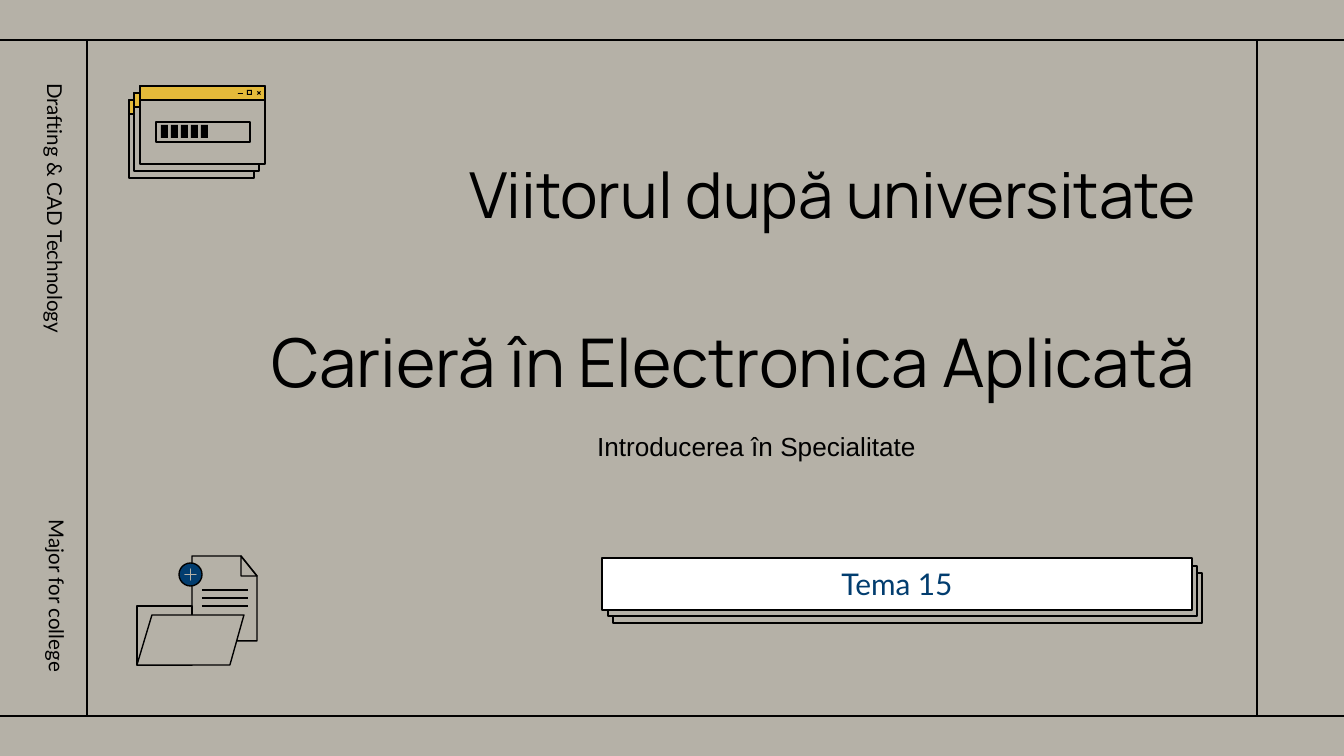
from lxml.etree import SubElement
from pptx import Presentation
from pptx.dml.color import RGBColor
from pptx.enum.shapes import MSO_CONNECTOR, MSO_SHAPE
from pptx.enum.text import MSO_ANCHOR as ANCHOR, PP_ALIGN as ALIGN
from pptx.oxml.ns import qn
from pptx.util import Emu, Pt

EMU_PER_PX = 914400 / 134.4
WIDTH, HEIGHT = 1344, 756
STONE = RGBColor(0xB5, 0xB1, 0xA7)
BLACK = RGBColor(0, 0, 0)
WHITE = RGBColor(0xFF, 0xFF, 0xFF)
NAVY = RGBColor(0x02, 0x3D, 0x6F)
GOLD = RGBColor(0xE4, 0xBA, 0x3A)
WIDE_INSET = 13


def px(value):
    return Emu(round(value * EMU_PER_PX))


def write(shape, text, *, font, size, color=BLACK, align=ALIGN.LEFT,
          anchor=ANCHOR.MIDDLE, inset=WIDE_INSET, line_spacing=None, space_after=0):
    frame = shape.text_frame
    frame.word_wrap = True
    frame.vertical_anchor = anchor
    frame.margin_left = frame.margin_right = px(WIDE_INSET)
    frame.margin_top = frame.margin_bottom = px(inset)
    paragraph = frame.paragraphs[0]
    paragraph.alignment = align
    paragraph.line_spacing = line_spacing
    paragraph.space_after = Pt(space_after)
    run = paragraph.add_run()
    run.text = text
    run.font.name = font
    run.font.size = Pt(size)
    run.font.color.rgb = color


class Canvas:
    """The current slide and the outline style shared by its elements."""

    def __init__(self, slide, line_color=BLACK, line_width=0.75):
        self.slide = slide
        self.shapes = slide.shapes
        self.line_color = line_color
        self.line_width = Pt(line_width)

    def style(self, shape, fill, line):
        shape.shadow.inherit = False
        if fill is None:
            shape.fill.background()
        else:
            shape.fill.solid()
            shape.fill.fore_color.rgb = fill
        if line is None:
            shape.line.fill.background()
        else:
            shape.line.color.rgb = line
            shape.line.width = self.line_width
        return shape

    def preset(self, kind, left, top, width, height, fill=None, line=BLACK, adjust=None):
        shape = self.shapes.add_shape(kind, px(left), px(top), px(width), px(height))
        if adjust is not None:
            shape.adjustments[0] = adjust
        return self.style(shape, fill, line)

    def rectangle(self, left, top, width, height, fill=None, line=BLACK):
        return self.preset(MSO_SHAPE.RECTANGLE, left, top, width, height, fill, line)

    def polygon(self, points, fill=None, line=BLACK):
        builder = self.shapes.build_freeform(*points[0], scale=EMU_PER_PX)
        builder.add_line_segments(points[1:], close=True)
        return self.style(builder.convert_to_shape(), fill, line)

    def line(self, x1, y1, x2, y2):
        connector = self.shapes.add_connector(
            MSO_CONNECTOR.STRAIGHT, px(x1), px(y1), px(x2), px(y2))
        connector.line.color.rgb = self.line_color
        connector.line.width = self.line_width
        SubElement(connector._element.spPr, qn("a:effectLst"))

    def text(self, left, top, width, height, text, rotation=0, **text_format):
        box = self.shapes.add_textbox(px(left), px(top), px(width), px(height))
        box.rotation = rotation
        write(box, text, **text_format)


def draw_page_frame(canvas):
    top, bottom = 40, 716
    for y in (top, bottom):
        canvas.line(0, y, WIDTH, y)
    for x in (87, 1257):
        canvas.line(x, bottom, x, top)


def draw_badge(canvas):
    for left, top in ((613, 573), (608, 566)):
        canvas.rectangle(left, top, 589, 50, STONE)
    badge = canvas.rectangle(602, 558, 590, 52, WHITE)
    write(badge, "Tema 15", font="Lato", size=16, color=NAVY, align=ALIGN.CENTER)


def draw_folder(canvas):
    canvas.rectangle(137, 606, 55, 59, STONE)
    canvas.polygon([(192, 556), (192, 641), (257, 641), (257, 576), (241, 556)])
    canvas.polygon([(241, 556), (241, 576), (257, 576)])
    canvas.polygon([(152, 615), (137, 665), (230, 665), (244, 615)], STONE)
    for row in range(3):
        y = 590 + 8 * row
        canvas.line(202, y, 248, y)
    canvas.preset(MSO_SHAPE.OVAL, 179, 563, 23, 23, NAVY)
    canvas.preset(MSO_SHAPE.MATH_PLUS, 183, 567, 15, 15, STONE, STONE, adjust=0)


def draw_window_controls(canvas, left, top):
    close_mark = [(0, 0), (2, 1), (4, 0), (3, 2), (4, 4), (2, 3), (0, 4), (1, 2)]
    canvas.polygon([(left + 19 + x, top + 1 + y) for x, y in close_mark], BLACK, None)
    canvas.preset(MSO_SHAPE.FRAME, left + 9, top, 5, 5, BLACK, None, adjust=0.2)
    canvas.rectangle(left, top + 3, 5, 1, BLACK, None)


def draw_loading_windows(canvas):
    for left, top in ((129, 100), (134, 93), (140, 86)):
        canvas.rectangle(left, top, 125, 78, STONE)
        canvas.rectangle(left, top, 125, 14, GOLD)
    draw_window_controls(canvas, 238, 90)
    canvas.rectangle(156, 122, 94, 20)
    for block in range(5):
        canvas.rectangle(161 + 10 * block, 125, 7, 13, BLACK, None)


def main():
    presentation = Presentation()
    presentation.slide_width, presentation.slide_height = px(WIDTH), px(HEIGHT)
    slide = presentation.slides.add_slide(presentation.slide_layouts[6])
    slide.background.fill.solid()
    slide.background.fill.fore_color.rgb = STONE
    canvas = Canvas(slide)

    draw_page_frame(canvas)
    draw_badge(canvas)
    canvas.text(342, 118, 867, 151, "Viitorul după universitate",
                font="Manrope", size=34, align=ALIGN.RIGHT)
    canvas.text(160, 298, 1048, 125, "Carieră în Electronica Aplicată",
                font="Manrope", size=36, align=ALIGN.RIGHT)
    canvas.text(321, 423, 871, 83, "Introducerea în Specialitate",
                font="Arial", size=14, align=ALIGN.CENTER, anchor=ANCHOR.TOP, inset=7)
    draw_folder(canvas)
    draw_loading_windows(canvas)
    canvas.text(-99, 211, 312, 30, "Drafting & CAD Technology", rotation=90,
                font="Lato", size=11, line_spacing=1.15, space_after=12)
    canvas.text(-82, 531, 278, 30, "Major for college", rotation=90,
                font="Lato", size=11, align=ALIGN.RIGHT)
    presentation.save("out.pptx")


if __name__ == "__main__":
    main()
